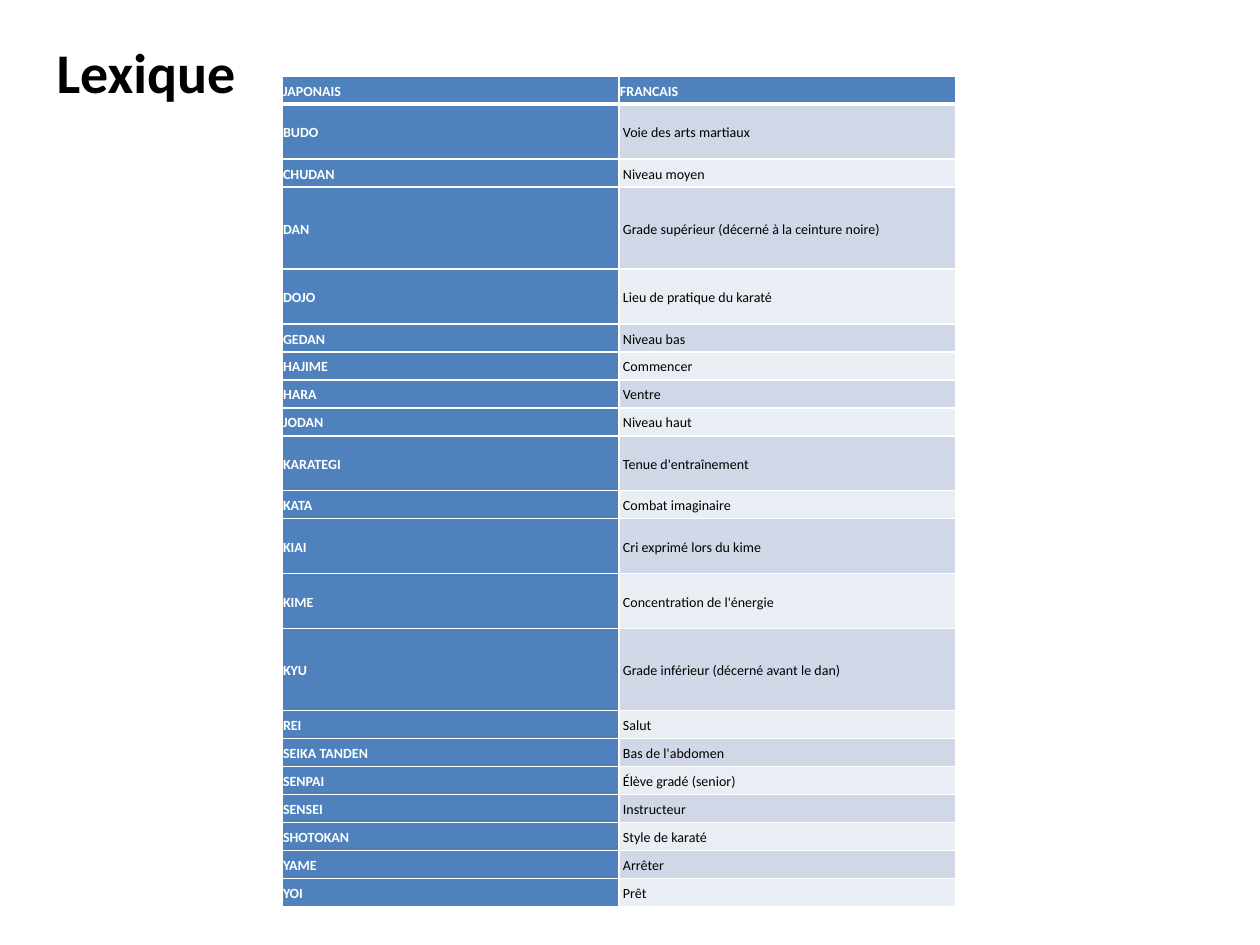
from lxml import etree
from pptx import Presentation
from pptx.dml.color import RGBColor as RGB
from pptx.enum.text import MSO_ANCHOR as Anchor, MSO_AUTO_SIZE as Fit, PP_ALIGN as Align
from pptx.oxml.ns import qn
from pptx.util import Pt

PX = 914400 / 126  # EMU in one px
COLORS = {"head": "4F81BD", "odd": "D0D8E8", "even": "E9EDF4",
          "white": "FFFFFF", "black": "000000"}

# Each term: Japanese, French, height in text lines
TERMS = [
    ("BUDO", "Voie des arts martiaux", 2),
    ("CHUDAN", "Niveau moyen", 1),
    ("DAN", "Grade supérieur (décerné à la ceinture noire)", 3),
    ("DOJO", "Lieu de pratique du karaté", 2),
    ("GEDAN", "Niveau bas", 1),
    ("HAJIME", "Commencer", 1),
    ("HARA", "Ventre", 1),
    ("JODAN", "Niveau haut", 1),
    ("KARATEGI", "Tenue d'entraînement", 2),
    ("KATA", "Combat imaginaire", 1),
    ("KIAI", "Cri exprimé lors du kime", 2),
    ("KIME", "Concentration de l'énergie", 2),
    ("KYU", "Grade inférieur (décerné avant le dan)", 3),
    ("REI", "Salut", 1),
    ("SEIKA TANDEN", "Bas de l'abdomen", 1),
    ("SENPAI", "Élève gradé (senior)", 1),
    ("SENSEI", "Instructeur", 1),
    ("SHOTOKAN", "Style de karaté", 1),
    ("YAME", "Arrêter", 1),
    ("YOI", "Prêt", 1),
]


def px(n):
    return round(n * PX)


class Deck:
    font = "Calibri"

    def __init__(self):
        self.prs = Presentation()
        self.prs.slide_width, self.prs.slide_height = px(1260), px(945)
        self.slide = self.prs.slides.add_slide(self.prs.slide_layouts[5])

    def label(self, frame, text, size, color, bold, gap=1.0):
        para = frame.paragraphs[0]
        para.alignment, para.line_spacing = Align.LEFT, gap
        run = para.add_run()
        run.text = text
        form = {"name": self.font, "size": Pt(size), "bold": bold}
        for key, val in form.items():
            setattr(run.font, key, val)
        run.font.color.rgb = RGB.from_string(COLORS[color])

    def title(self, text, box):
        shape = self.slide.shapes.title
        for key, val in zip(("left", "top", "width", "height"), box):
            setattr(shape, key, px(val))
        frame = shape.text_frame
        form = {"auto_size": Fit.NONE, "word_wrap": False,
                "vertical_anchor": Anchor.TOP, "margin_top": px(21)}
        for key, val in form.items():
            setattr(frame, key, val)
        self.label(frame, text, 32, "black", True)

    def edges(self, cell, top, bottom):
        props = cell._tc.get_or_add_tcPr()
        for side, width in {"L": 1, "R": 1, "T": top, "B": bottom}.items():
            line = etree.SubElement(props, qn(f"a:ln{side}"), w=str(Pt(width)))
            fill = etree.SubElement(line, qn("a:solidFill"))
            etree.SubElement(fill, qn("a:srgbClr"), val=COLORS["white"])

    def cell(self, cell, text, fill, row, term):
        self.edges(cell, 3 if row == 1 else 1, 3 if row == 0 else 1)
        cell.fill.solid()
        cell.fill.fore_color.rgb = RGB.from_string(COLORS[fill])
        form = {"vertical_anchor": Anchor.MIDDLE, "margin_left": px(1 if term else 4),
                "margin_right": px(1), "margin_top": px(1), "margin_bottom": px(1)}
        for key, val in form.items():
            setattr(cell, key, val)
        self.label(cell.text_frame, text, 8, "white" if term else "black", term, 1.15)

    def table(self, rows, left, top, width):
        tall = {1: 28, 2: 55, 3: 82}
        high = sum(tall[lines] for *_, lines in rows)
        grid = self.slide.shapes.add_table(
            len(rows), 2, px(left), px(top), px(width), px(high)).table
        for i, (*words, lines) in enumerate(rows):
            grid.rows[i].height = px(tall[lines])
            for j, word in enumerate(words):
                term = i == 0 or j == 0
                fill = "head" if term else "odd" if i % 2 else "even"
                self.cell(grid.cell(i, j), word, fill, i, term)


def main():
    deck = Deck()
    # Glossary table, then its title
    deck.table([("JAPONAIS", "FRANCAIS", 1)] + TERMS, 282, 76, 674)
    deck.title("Lexique", (44, 16, 205, 165))
    deck.prs.save("out.pptx")


if __name__ == "__main__":
    main()
